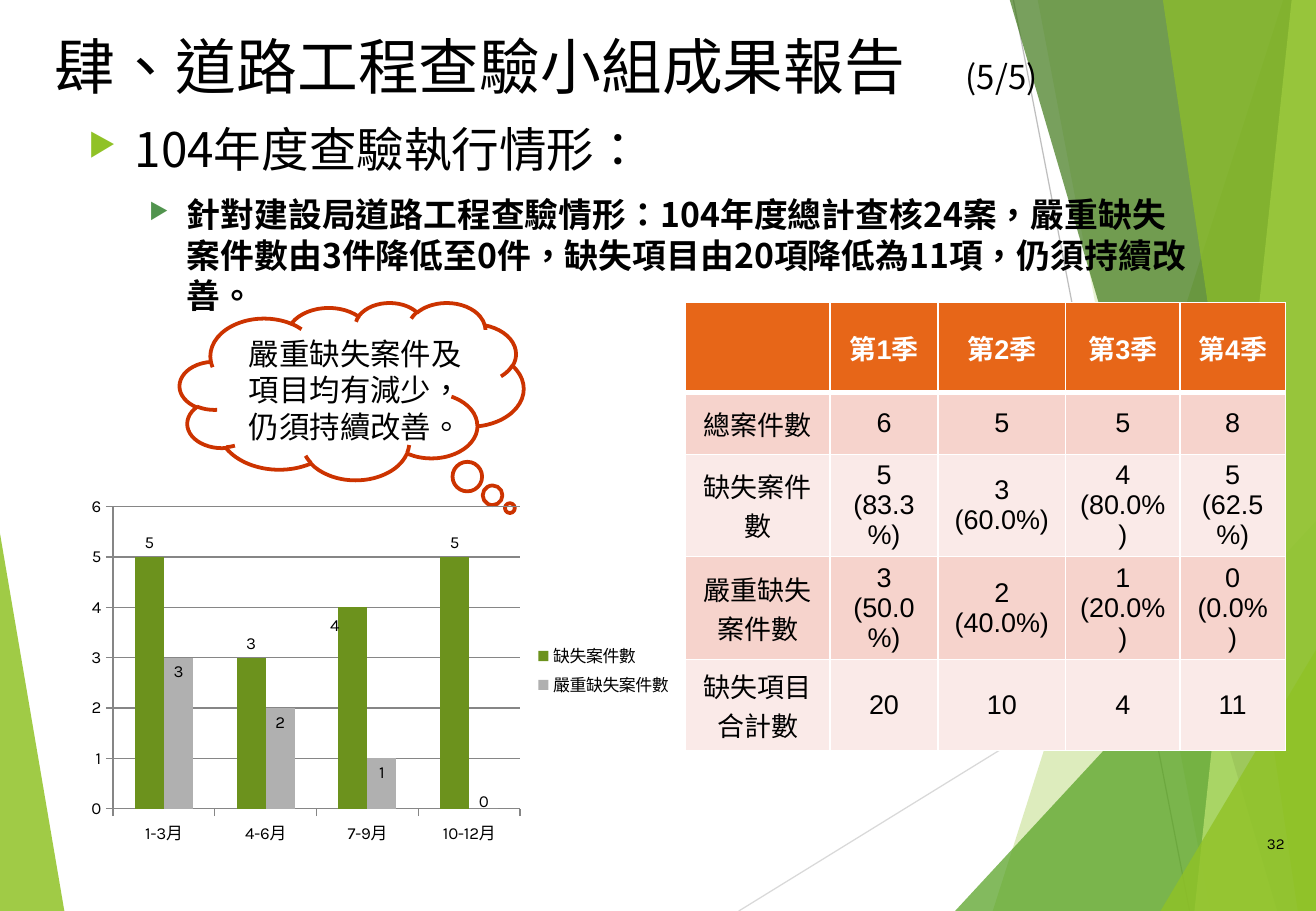
from dataclasses import dataclass, field
from typing import Any

from lxml.etree import SubElement
from pptx import Presentation
from pptx.chart.data import CategoryChartData
from pptx.dml.color import RGBColor
from pptx.enum.chart import XL_CHART_TYPE, XL_LABEL_POSITION, XL_LEGEND_POSITION, XL_TICK_MARK
from pptx.enum.shapes import MSO_CONNECTOR, MSO_SHAPE
from pptx.enum.text import MSO_ANCHOR, PP_ALIGN
from pptx.oxml import parse_xml
from pptx.oxml.ns import nsdecls, qn
from pptx.util import Pt

PX = 9144  # 100 px to the inch
WIDTH, HEIGHT = 1083, 750
CJK = "Noto Sans CJK SC"
COLORS = {
    "black": "000000", "white": "FFFFFF", "lime": "90C226", "leaf": "54A021",
    "forest": "3F7819", "pale": "C0E474", "bullet": "51944E", "header": "E76618",
    "band": "F6D3CC", "light": "FAEAE8", "cloud": "CC3300", "defects": "6C921D",
    "severe": "B0B0B0", "grid": "868686", "ray": "D9D9D9", "ray_dark": "BFBFBF",
}


@dataclass
class Facet:
    color: str
    alpha: int
    points: list[tuple[int, int]]


@dataclass
class Run:
    text: str
    size: float
    bold: bool = False
    color: str = "black"
    font: str = CJK


@dataclass
class Para:
    runs: list[Run]
    align: PP_ALIGN = PP_ALIGN.LEFT
    before: int = 0
    indent: tuple[int, int] = (0, 0)
    bullet: str = ""
    tab: int = 0


@dataclass
class Block:
    box: tuple[int, int, int, int]
    paras: list[Para]
    format: dict[str, Any] = field(default_factory=dict)


@dataclass
class Series:
    name: str
    values: tuple[int, ...]
    color: str
    label_at: XL_LABEL_POSITION
    moved_point: int
    move: tuple[float, float]


LEFT_FACET = Facet("lime", 85, [(0, 439), (53, 750), (0, 750)])
RIGHT_FACETS = [
    Facet("lime", 30, [(1056, 0), (817, 750), (1083, 750), (1083, 0)]),
    Facet("lime", 20, [(854, 0), (996, 750), (1083, 750), (1083, 0)]),
    Facet("leaf", 72, [(786, 750), (1083, 429), (1083, 750)]),
    Facet("forest", 70, [(831, 0), (1051, 750), (1083, 750), (1083, 0)]),
    Facet("pale", 70, [(1063, 0), (983, 750), (1083, 750), (1083, 0)]),
    Facet("lime", 65, [(957, 0), (1068, 750), (1083, 750), (1083, 0)]),
    Facet("lime", 80, [(955, 750), (1083, 535), (1083, 750)]),
]
RAYS = [("ray", (608, 750, 1083, 457)), ("ray_dark", (834, 0, 979, 750))]

TITLE = Block((35, 19, 920, 156), [
    Para([Run("肆、道路工程查驗小組成果報告", 36), Run("\t(5/5)", 19.5)], tab=719)])
BODY = Block((63, 94, 927, 572), [
    Para([Run("104年度查驗執行情形：", 28.2)], indent=(38, -38), bullet="lime"),
    Para([Run("針對建設局道路工程查驗情形：104年度總計查核24案，嚴重缺失案件數由3件降低至0件，"
              "缺失項目由20項降低為11項，仍須持續改善。", 20, True)],
         before=10, indent=(81, -31), bullet="bullet")])
NUMBER = Block((1006, 674, 61, 40), [Para([Run("32", 9, font="Karla")], PP_ALIGN.RIGHT)],
               {"vertical_anchor": MSO_ANCHOR.MIDDLE})
REMARK = Block((195, 271, 205, 101), [
    Para([Run("嚴重缺失案件及項目均有減少，仍須持續改善。", 18, font="Arial")])])

COLUMNS = [119, 89, 105, 94, 87]
ROWS = [74, 51, 84, 85, 75]
CELLS = [
    ["", "第1季", "第2季", "第3季", "第4季"],
    ["總案件數", "6", "5", "5", "8"],
    ["缺失案件數", "5\n(83.3%)", "3\n(60.0%)", "4\n(80.0%)", "5\n(62.5%)"],
    ["嚴重缺失案件數", "3\n(50.0%)", "2\n(40.0%)", "1\n(20.0%)", "0\n(0.0%)"],
    ["缺失項目合計數", "20", "10", "4", "11"],
]
MONTHS = ["1-3月", "4-6月", "7-9月", "10-12月"]
SERIES = [
    Series("缺失案件數", (5, 3, 4, 5), "defects", XL_LABEL_POSITION.OUTSIDE_END, 2, (-0.03, 0.09)),
    Series("嚴重缺失案件數", (3, 2, 1, 0), "severe", XL_LABEL_POSITION.INSIDE_END, 3, (0, 0.02)),
]


def rgb(name: str) -> RGBColor:
    return RGBColor.from_string(COLORS[name])


def scaled(*lengths: int) -> list[int]:
    return [n * PX for n in lengths]


def apply(target: Any, values: dict[str, Any]) -> None:
    for name, value in values.items():
        setattr(target, name, value)


def add_facet(s: Any, facet: Facet) -> None:
    builder = s.shapes.build_freeform(*facet.points[0], scale=PX)
    builder.add_line_segments(facet.points[1:], close=True)
    sp = builder.convert_to_shape()
    sp.shadow.inherit = False
    sp.line.fill.background()
    sp.fill.solid()
    sp.fill.fore_color.rgb = rgb(facet.color)
    color = sp._element.spPr.find(".//" + qn("a:srgbClr"))
    SubElement(color, qn("a:alpha"), val=str(facet.alpha * 1000))


def add_ray(s: Any, color: str, ends: tuple[int, int, int, int]) -> None:
    ray = s.shapes.add_connector(MSO_CONNECTOR.STRAIGHT, *scaled(*ends))
    ray.line.color.rgb = rgb(color)
    ray.line.width = Pt(0.75)
    SubElement(ray._element.spPr, qn("a:effectLst"))


def write_para(p: Any, para: Para) -> None:
    apply(p, {"alignment": para.align, "space_before": Pt(para.before)})
    pPr = p._p.get_or_add_pPr()
    left, first = scaled(*para.indent)
    pPr.set("marL", str(left))
    pPr.set("indent", str(first))
    if para.bullet:
        color = SubElement(pPr, qn("a:buClr"))
        SubElement(color, qn("a:srgbClr"), val=COLORS[para.bullet])
        SubElement(pPr, qn("a:buSzPct"), val="66000")
        SubElement(pPr, qn("a:buChar"), char="▶")
    if para.tab:
        SubElement(SubElement(pPr, qn("a:tabLst")), qn("a:tab"), pos=str(para.tab * PX), algn="l")
    for run in para.runs:
        r = p.add_run()
        r.text = run.text
        apply(r.font, {"size": Pt(run.size), "bold": run.bold, "name": run.font})
        r.font.color.rgb = rgb(run.color)
        rPr = r._r.get_or_add_rPr()
        rPr.set("lang", "zh-TW")
        SubElement(rPr, qn("a:ea"), typeface=CJK)


def add_block(s: Any, block: Block) -> None:
    tf = s.shapes.add_textbox(*scaled(*block.box)).text_frame
    apply(tf, {"word_wrap": True, **block.format})
    for i, para in enumerate(block.paras):
        write_para(tf.add_paragraph() if i else tf.paragraphs[0], para)


def set_borders(cell: Any, widths: dict[str, int]) -> None:
    tcPr = cell._tc.get_or_add_tcPr()
    for i, (side, width) in enumerate(widths.items()):
        tcPr.insert(i, parse_xml(
            f'<a:ln{side} {nsdecls("a")} w="{Pt(width)}"><a:solidFill>'
            f'<a:srgbClr val="{COLORS["white"]}"/></a:solidFill></a:ln{side}>'))


def add_season_table(s: Any) -> None:
    box = scaled(564, 249, sum(COLUMNS), sum(ROWS))
    table = s.shapes.add_table(len(ROWS), len(COLUMNS), *box).table
    for column, width in zip(table.columns, COLUMNS):
        column.width = width * PX
    for i, (row, height, texts) in enumerate(zip(table.rows, ROWS, CELLS)):
        row.height = height * PX
        fill = "header" if i == 0 else "band" if i % 2 else "light"
        color = "white" if i == 0 else "black"
        for cell, text in zip(row.cells, texts):
            apply(cell, {"vertical_anchor": MSO_ANCHOR.MIDDLE, "margin_left": 11 * PX,
                         "margin_right": 11 * PX, "margin_top": 2 * PX, "margin_bottom": 2 * PX})
            cell.fill.solid()
            cell.fill.fore_color.rgb = rgb(fill)
            set_borders(cell, {"L": 1, "R": 1, "T": 3 if i == 1 else 1, "B": 3 if i == 0 else 1})
            tf = cell.text_frame
            for j, line in enumerate(text.split("\n") if text else []):
                write_para(tf.add_paragraph() if j else tf.paragraphs[0],
                           Para([Run(line, 16, i == 0, color, "Arial")], PP_ALIGN.CENTER))


def add_cloud(s: Any) -> None:
    sp = s.shapes.add_shape(MSO_SHAPE.CLOUD_CALLOUT, *scaled(148, 249, 283, 146))
    sp.adjustments[0], sp.adjustments[1] = 0.46, 0.66
    sp.shadow.inherit = False
    sp.fill.background()
    sp.line.color.rgb = rgb("cloud")
    sp.line.width = Pt(2.25)


def manual_layout(**values: Any) -> Any:
    """Build a c:layout whose children hold the given values in order."""
    layout = parse_xml(f'<c:layout {nsdecls("c")}><c:manualLayout/></c:layout>')
    for name, value in values.items():
        SubElement(layout[0], qn(f"c:{name}"), val=str(value))
    return layout


def style_bars(bars: Any, series: Series) -> None:
    bars.format.fill.solid()
    bars.format.fill.fore_color.rgb = rgb(series.color)
    apply(bars.data_labels, {"show_value": True, "position": series.label_at})
    for leader in bars._element.iter(qn("c:showLeaderLines")):
        leader.set("val", "0")
    bars.points[series.moved_point].data_label.position = XL_LABEL_POSITION.OUTSIDE_END
    x, y = series.move
    bars._element.find(".//" + qn("c:dLbl")).insert(1, manual_layout(x=x, y=y))


def add_defect_chart(s: Any) -> None:
    data = CategoryChartData()
    data.categories = MONTHS
    for series in SERIES:
        data.add_series(series.name, series.values)
    chart = s.shapes.add_chart(XL_CHART_TYPE.COLUMN_CLUSTERED, *scaled(63, 402, 500, 300), data).chart
    apply(chart, {"has_title": False, "has_legend": True})
    apply(chart.font, {"size": Pt(10), "name": "Karla"})
    chart.font.color.rgb = rgb("black")
    apply(chart.legend, {"position": XL_LEGEND_POSITION.RIGHT, "include_in_layout": False})
    apply(chart.value_axis, {"minimum_scale": 0, "maximum_scale": 6, "major_unit": 1})
    for axis in (chart.category_axis, chart.value_axis):
        axis.major_tick_mark = XL_TICK_MARK.OUTSIDE
        axis.format.line.color.rgb = rgb("grid")
    chart.value_axis.major_gridlines.format.line.color.rgb = rgb("grid")
    plot = chart.plots[0]
    apply(plot, {"gap_width": 150, "overlap": 0, "vary_by_categories": False})
    for bars, series in zip(plot.series, SERIES):
        style_bars(bars, series)
    area = chart._chartSpace.find(".//" + qn("c:plotArea"))
    for old in area.findall(qn("c:layout")):
        area.remove(old)
    area.insert(0, manual_layout(layoutTarget="inner", xMode="edge", yMode="edge",
                                 x=0.06, y=0.05, w=0.67, h=0.83))


def main() -> None:
    prs = Presentation()
    prs.slide_width, prs.slide_height = scaled(WIDTH, HEIGHT)
    s = prs.slides.add_slide(prs.slide_layouts[6])
    add_facet(s, LEFT_FACET)
    for color, ends in RAYS:
        add_ray(s, color, ends)
    for facet in RIGHT_FACETS:
        add_facet(s, facet)
    for block in (TITLE, BODY, NUMBER):
        add_block(s, block)
    add_season_table(s)
    add_block(s, REMARK)
    add_cloud(s)
    add_defect_chart(s)
    prs.save("out.pptx")


if __name__ == "__main__":
    main()
